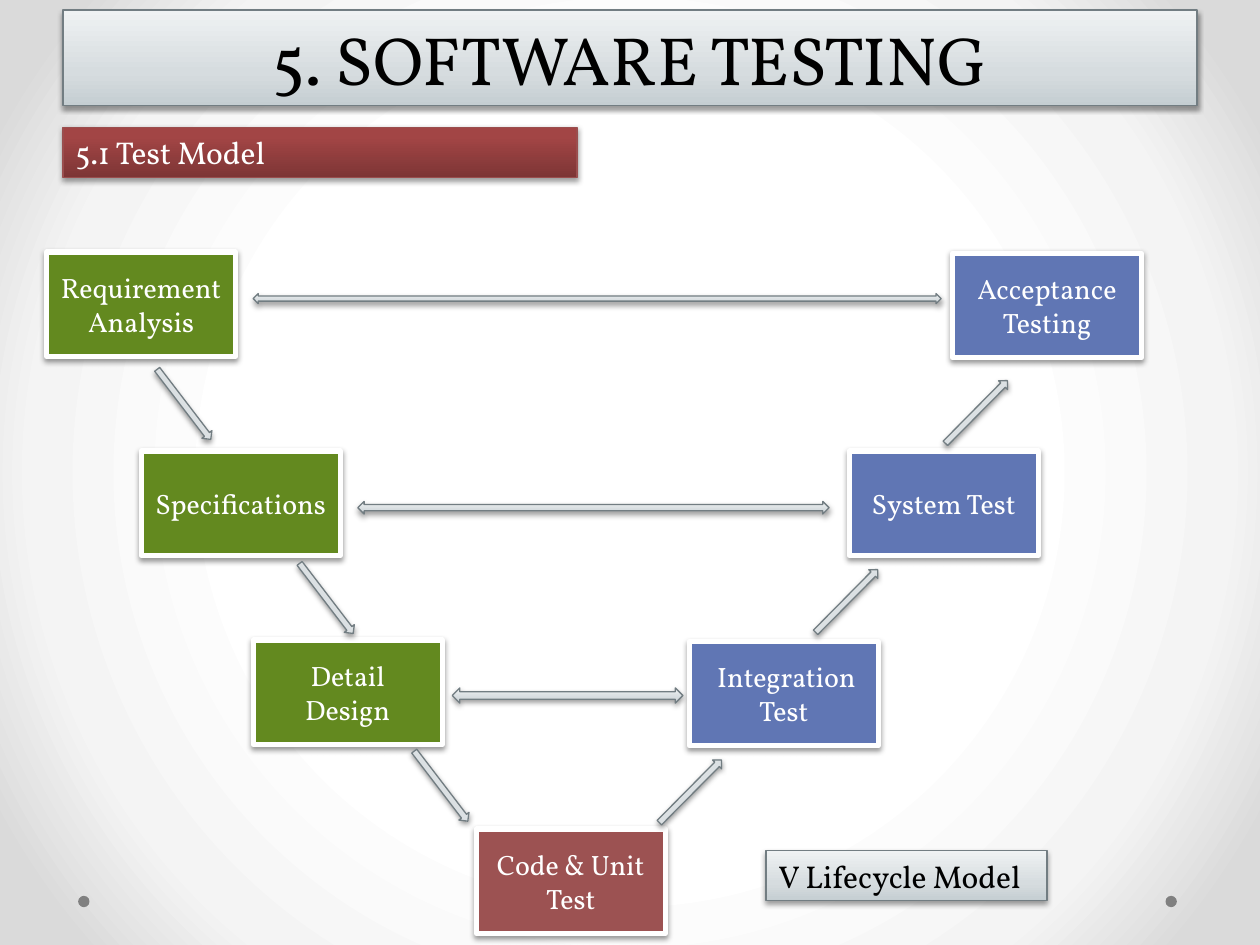
"""Build the V lifecycle model slide of a software testing lecture."""
from lxml.etree import SubElement
from pptx import Presentation
from pptx.dml.color import RGBColor
from pptx.enum.shapes import MSO_SHAPE
from pptx.enum.text import MSO_ANCHOR, PP_ALIGN
from pptx.oxml.ns import qn
from pptx.util import Inches, Pt

COLORS = {
    "black": "000000", "white": "FFFFFF", "dot": "808080",
    "steel line": "727D82", "red line": "9A4E4E",
    "design": "63891F", "code": "9C5252", "test": "6076B4",
}
GRADIENTS = {
    "steel": {0: "C5CED2", 35: "D6DCDF", 100: "EFF2F3"},
    "red": {0: "7D3535", 80: "A24545", 100: "A44343"},
    "backdrop": {50: "FFFFFF", 76: "F4F4F4", 92: "DADADA"},
}


def apply_gradient(fill, holder, name, radial=False):
    fill.gradient()
    gradient = next(holder.iter(qn("a:gradFill")))
    for child in list(gradient):
        gradient.remove(child)
    stops = SubElement(gradient, qn("a:gsLst"))
    for position, color in GRADIENTS[name].items():
        stop = SubElement(stops, qn("a:gs"), pos=str(position * 1000))
        SubElement(stop, qn("a:srgbClr"), val=color)
    if radial:
        center = SubElement(gradient, qn("a:path"), path="circle")
        SubElement(center, qn("a:fillToRect"), l="50000", t="50000", r="50000", b="50000")
    else:
        SubElement(gradient, qn("a:lin"), ang="16200000", scaled="0")


def add_block(text, box, *, shape=None, kind=MSO_SHAPE.RECTANGLE, fill="steel",
              line="steel line", line_width=0.75, shadow=True, size=16, color="white",
              align=PP_ALIGN.CENTER, anchor=MSO_ANCHOR.MIDDLE, wrap=True, rotation=0):
    left, top, width, height = (Inches(value) for value in box)
    block = shape or slide.shapes.add_shape(kind, left, top, width, height)
    block.left, block.top, block.width, block.height = left, top, width, height
    block.rotation = rotation
    if fill in GRADIENTS:
        apply_gradient(block.fill, block._element.spPr, fill)
    else:
        block.fill.solid()
        block.fill.fore_color.rgb = RGBColor.from_string(COLORS[fill])
    if line:
        block.line.color.rgb = RGBColor.from_string(COLORS[line])
        block.line.width = Pt(line_width)
    else:
        block.line.fill.background()
    block.shadow.inherit = False
    if shadow:
        effects = block._element.spPr.find(qn("a:effectLst"))
        outer = SubElement(effects, qn("a:outerShdw"), blurRad=str(Pt(3.1)),
                           dist=str(Pt(1.6)), dir="5400000", rotWithShape="0")
        shade = SubElement(outer, qn("a:srgbClr"), val=COLORS["black"])
        SubElement(shade, qn("a:alpha"), val="38000")
    if text:
        frame = block.text_frame
        frame.word_wrap = wrap
        frame.vertical_anchor = anchor
        paragraph = frame.paragraphs[0]
        paragraph.alignment = align
        run = paragraph.add_run()
        run.text = text
        run.font.name = "Vollkorn"
        run.font.size = Pt(size)
        run.font.color.rgb = RGBColor.from_string(COLORS[color])


presentation = Presentation()
presentation.slide_width = Inches(10)
presentation.slide_height = Inches(7.5)
slide = presentation.slides.add_slide(presentation.slide_layouts[5])
apply_gradient(slide.background.fill, slide._element, "backdrop", radial=True)

for dot_left in (9.25, 0.62):
    add_block("", (dot_left, 7.11, 0.09, 0.09), kind=MSO_SHAPE.OVAL,
              fill="dot", line=None, shadow=False)

add_block("5. SOFTWARE TESTING", (0.5, 0.08, 9, 0.76), shape=slide.shapes.title,
          size=39, color="black")
add_block("5.1 Test Model", (0.5, 1.01, 4.08, 0.4), fill="red", line="red line",
          size=18, align=PP_ALIGN.LEFT, anchor=MSO_ANCHOR.TOP)
add_block("V Lifecycle Model", (6.08, 6.75, 2.23, 0.4), size=18, color="black",
          align=PP_ALIGN.LEFT, anchor=MSO_ANCHOR.TOP, wrap=False)

stages = [
    ("Requirement Analysis", 0.37, 2, 1.5, "design"),
    ("Specifications", 1.12, 3.58, 1.58, "design"),
    ("Detail Design", 2.01, 5.08, 1.5, "design"),
    ("Code & Unit Test", 3.78, 6.58, 1.5, "code"),
    (" Integration Test", 5.47, 5.09, 1.5, "test"),
    ("System Test", 6.74, 3.58, 1.5, "test"),
    ("Acceptance Testing", 7.56, 2.01, 1.5, "test"),
]
for stage, left, top, width, phase in stages:
    add_block(stage, (left, top, width, 0.83), fill=phase, line="white", line_width=3)

for verification in [(2.01, 2.33, 5.46, 0.08), (2.84, 3.98, 3.74, 0.1), (3.59, 5.46, 1.83, 0.12)]:
    add_block("", verification, kind=MSO_SHAPE.LEFT_RIGHT_ARROW)

flows = {
    52.6: [(1.11, 3.16), (2.24, 4.7), (3.15, 6.19)],
    314.7: [(5.13, 6.23), (6.37, 4.72), (7.4, 3.22)],
}
for angle, steps in flows.items():
    for left, top in steps:
        add_block("", (left, top, 0.7, 0.1), kind=MSO_SHAPE.RIGHT_ARROW, rotation=angle)

presentation.save("out.pptx")
